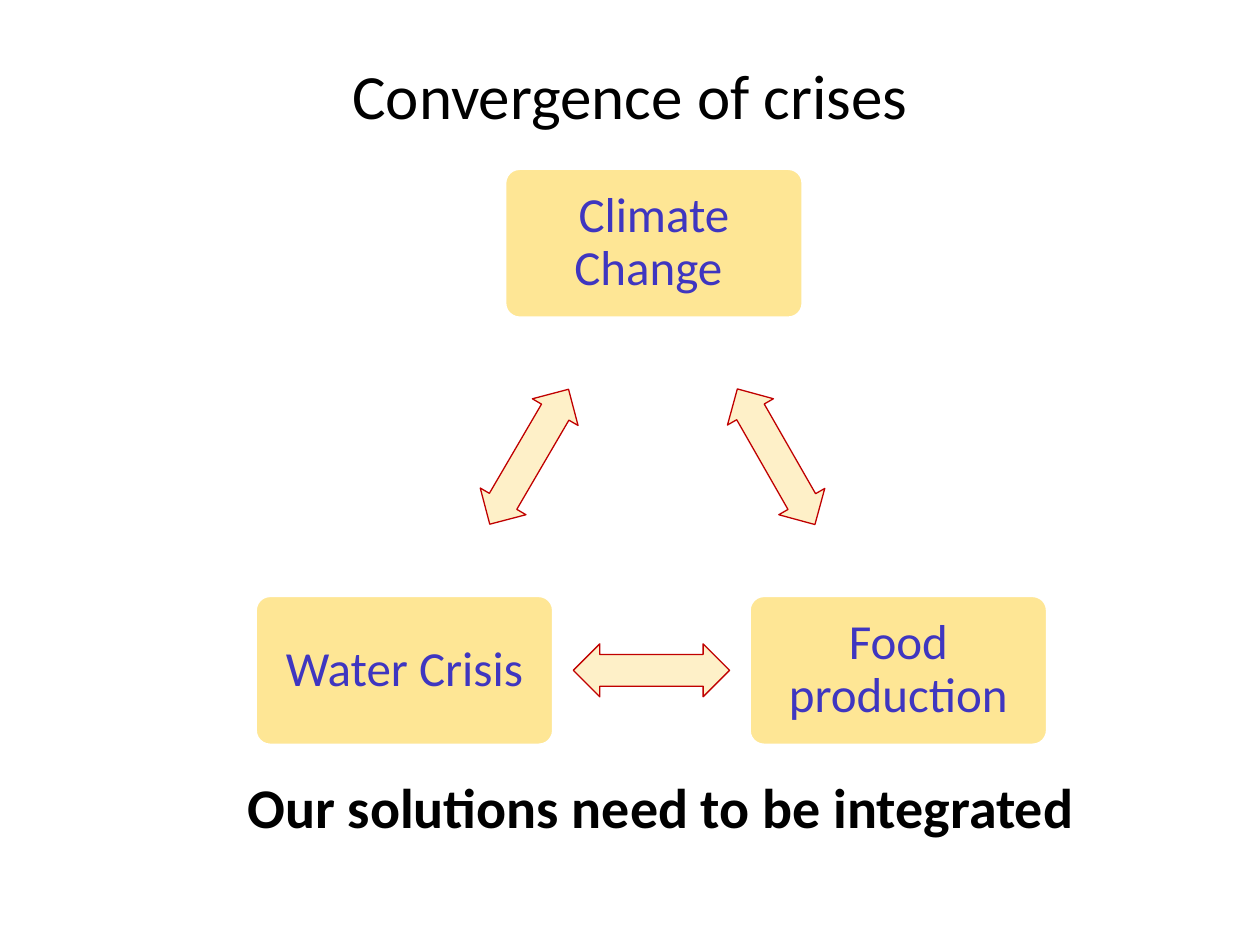
import math
from itertools import pairwise

from pptx import Presentation
from pptx import util as u
from pptx.dml.color import RGBColor
from pptx.enum import shapes, text
from pptx.oxml.ns import qn

BLACK = RGBColor(0x00, 0x00, 0x00)
WHITE = RGBColor(0xFF, 0xFF, 0xFF)
GOLD = RGBColor(0xFE, 0xE6, 0x95)
CREAM = RGBColor(0xFE, 0xF0, 0xC8)
RED = RGBColor(0xC0, 0x00, 0x00)
INDIGO = RGBColor(0x3F, 0x36, 0xC0)

WIDTH, HEIGHT = u.Inches(10), u.Inches(7.5)
CELL = WIDTH / 100  # the grid has 100 columns and 75 rows of square cells


def cells(*counts):
    return [u.Emu(round(count * CELL)) for count in counts]


def write(frame, words, size, color=BLACK, bold=False, spacing=1.0, inset=None,
          anchor=text.MSO_ANCHOR.MIDDLE, bullet=True):
    frame.word_wrap = True
    frame.auto_size = text.MSO_AUTO_SIZE.NONE
    frame.vertical_anchor = anchor
    if inset is not None:
        frame.margin_left = frame.margin_right = inset
        frame.margin_top = frame.margin_bottom = inset
    line = frame.paragraphs[0]
    line.text = words
    line.alignment = text.PP_ALIGN.CENTER
    line.line_spacing = spacing
    line.space_before = u.Pt(0)
    if not bullet:
        properties = line._p.get_or_add_pPr()
        properties.set("marL", "0")
        properties.set("indent", "0")
        properties.append(properties.makeelement(qn("a:buNone"), {}))
    font = line.font
    font.name, font.size, font.bold = "Calibri", u.Pt(size), bold
    font.color.rgb = color


class CycleSlide:
    BOX = (23.7, 11.9)
    ARROW = (12.4, 4.2)

    def __init__(self, deck):
        self.slide = deck.slides.add_slide(deck.slide_layouts[1])

    def placeholder(self, index, area, words, size, **style):
        holder = self.slide.placeholders[index]
        holder.left, holder.top, holder.width, holder.height = cells(*area)
        write(holder.text_frame, words, size, **style)

    def centred(self, kind, centre, size, fill, outline, weight, adjustments):
        (x, y), (width, height) = centre, size
        figure = self.slide.shapes.add_shape(
            kind, *cells(x - width / 2, y - height / 2, width, height))
        figure.shadow.inherit = False
        for index, value in enumerate(adjustments):
            figure.adjustments[index] = value
        figure.fill.solid()
        figure.fill.fore_color.rgb = fill
        figure.line.color.rgb = outline
        figure.line.width = u.Pt(weight)
        return figure

    def crisis(self, words, centre):
        box = self.centred(shapes.MSO_SHAPE.ROUNDED_RECTANGLE, centre, self.BOX,
                           GOLD, WHITE, 2, [0.1])
        write(box.text_frame, words, 28, color=INDIGO, spacing=0.9,
              inset=u.Inches(0.15))

    def link(self, start, end):
        """Put a double arrow halfway between two centres, turned along their line."""
        (x1, y1), (x2, y2) = start, end
        arrow = self.centred(shapes.MSO_SHAPE.LEFT_RIGHT_ARROW,
                             ((x1 + x2) / 2, (y1 + y2) / 2), self.ARROW,
                             CREAM, RED, 0.75, [0.6, 0.5])
        arrow.rotation = math.degrees(math.atan2(y2 - y1, x2 - x1))


def main():
    deck = Presentation()
    deck.slide_width, deck.slide_height = WIDTH, HEIGHT
    page = CycleSlide(deck)
    page.placeholder(0, (7.5, 3.3, 85, 8.3), "Convergence of crises", 36)

    crises = {
        "Climate Change ": (51.9, 19.3),
        "Food production": (71.3, 53.2),
        "Water Crisis": (32.1, 53.2),
    }
    for words, centre in crises.items():
        page.crisis(words, centre)
    centres = list(crises.values())
    for start, end in pairwise(centres + centres[:1]):
        page.link(start, end)

    page.placeholder(1, (10.8, 60.8, 83.3, 6.7), "Our solutions need to be integrated",
                     32, bold=True, anchor=text.MSO_ANCHOR.TOP, bullet=False)
    deck.save("out.pptx")


if __name__ == "__main__":
    main()
